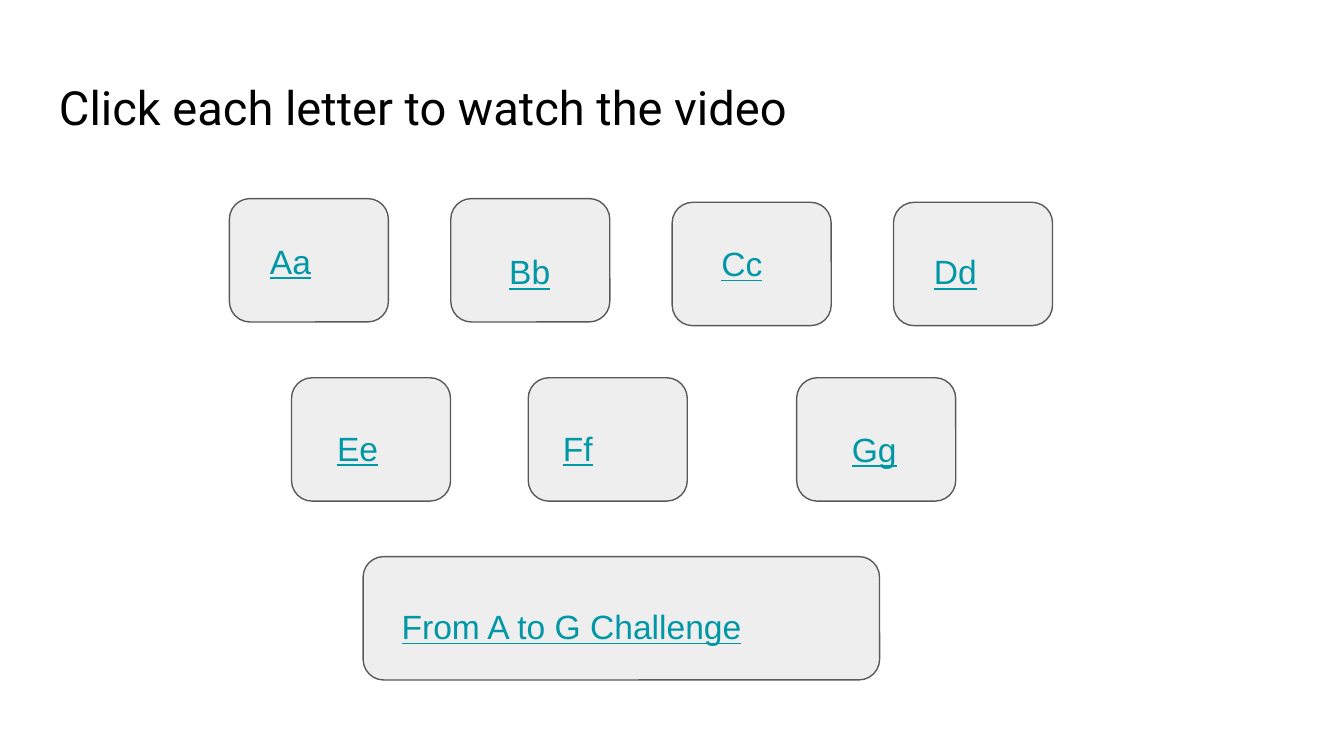
from dataclasses import dataclass

from pptx import Presentation
from pptx.dml.color import RGBColor
from pptx.enum.dml import MSO_LINE
from pptx.enum.shapes import MSO_SHAPE
from pptx.enum.text import MSO_ANCHOR
from pptx.util import Pt


@dataclass(frozen=True)
class Theme:
    background: RGBColor = RGBColor(0xFF, 0xFF, 0xFF)
    card_fill: RGBColor = RGBColor(0xEE, 0xEE, 0xEE)
    card_line: RGBColor = RGBColor(0x59, 0x59, 0x59)
    title_color: RGBColor = RGBColor(0x00, 0x00, 0x00)
    label_color: RGBColor = RGBColor(0x00, 0x97, 0xA7)
    title_font: str = "Roboto"
    label_font: str = "Arial"
    title_size: float = 25.2
    label_size: float = 18


THEME = Theme()
TITLE_FORMAT = {"name": THEME.title_font, "size": Pt(THEME.title_size)}
LABEL_FORMAT = {"name": THEME.label_font, "size": Pt(THEME.label_size), "underline": True}

CARD_WIDTH, CARD_HEIGHT = 85.2, 66.1
CHALLENGE_WIDTH = 276.7
FIRST_LEFT, FIRST_STEP = 122.9, 118.6
SECOND_TOP = 202.4
INSET = 7.2

# Card top, then label left, top, width and height
FIRST_ROW = [
    ("Aa", 106.4, (137.5, 121.7, 51, 36)),
    ("Bb", 106.4, (265.7, 127.4, 60.5, 27.4)),
    ("Cc", 108.4, (379.4, 123.1, 60.5, 36)),
    ("Dd", 108.4, (493.2, 127.4, 51, 27.4)),
]
# Card left, then label left, top, width and height
SECOND_ROW = [
    ("Ee", 156.2, (173.5, 221.8, 51, 27.4)),
    ("Ff", 283, (294.5, 221.8, 51, 27.4)),
    ("Gg", 426.8, (449.3, 222.5, 41, 27.4)),
]


def add_text(slide, text, box, font_format, color):
    text_box = slide.shapes.add_textbox(*map(Pt, box))
    frame = text_box.text_frame
    frame.word_wrap = True
    frame.vertical_anchor = MSO_ANCHOR.TOP
    for side in ("left", "top", "right", "bottom"):
        setattr(frame, f"margin_{side}", Pt(INSET))
    run = frame.paragraphs[0].add_run()
    run.text = text
    for attribute, value in font_format.items():
        setattr(run.font, attribute, value)
    run.font.color.rgb = color


def add_card(slide, left, top, width=CARD_WIDTH):
    card = slide.shapes.add_shape(
        MSO_SHAPE.ROUNDED_RECTANGLE, Pt(left), Pt(top), Pt(width), Pt(CARD_HEIGHT)
    )
    card.adjustments[0] = 0.167
    card.shadow.inherit = False
    card.fill.solid()
    card.fill.fore_color.rgb = THEME.card_fill
    card.line.color.rgb = THEME.card_line
    card.line.width = Pt(0.75)
    card.line.dash_style = MSO_LINE.SOLID


def add_labelled_card(slide, text, left, top, label_box, width=CARD_WIDTH):
    add_card(slide, left, top, width)
    add_text(slide, text, label_box, LABEL_FORMAT, THEME.label_color)


def main():
    presentation = Presentation()
    presentation.slide_width, presentation.slide_height = Pt(720), Pt(405)
    slide = presentation.slides.add_slide(presentation.slide_layouts[6])
    slide.background.fill.solid()
    slide.background.fill.fore_color.rgb = THEME.background

    add_text(slide, "Click each letter to watch the video", (24.5, 35.1, 671, 45.1),
             TITLE_FORMAT, THEME.title_color)
    for column, (text, top, label_box) in enumerate(FIRST_ROW):
        add_labelled_card(slide, text, FIRST_LEFT + column * FIRST_STEP, top, label_box)
    for text, left, label_box in SECOND_ROW:
        add_labelled_card(slide, text, left, SECOND_TOP, label_box)
    add_labelled_card(slide, "From A to G Challenge", 194.5, 298.2,
                      (208.1, 317.5, CHALLENGE_WIDTH, 27.4), CHALLENGE_WIDTH)

    presentation.save("out.pptx")


if __name__ == "__main__":
    main()
